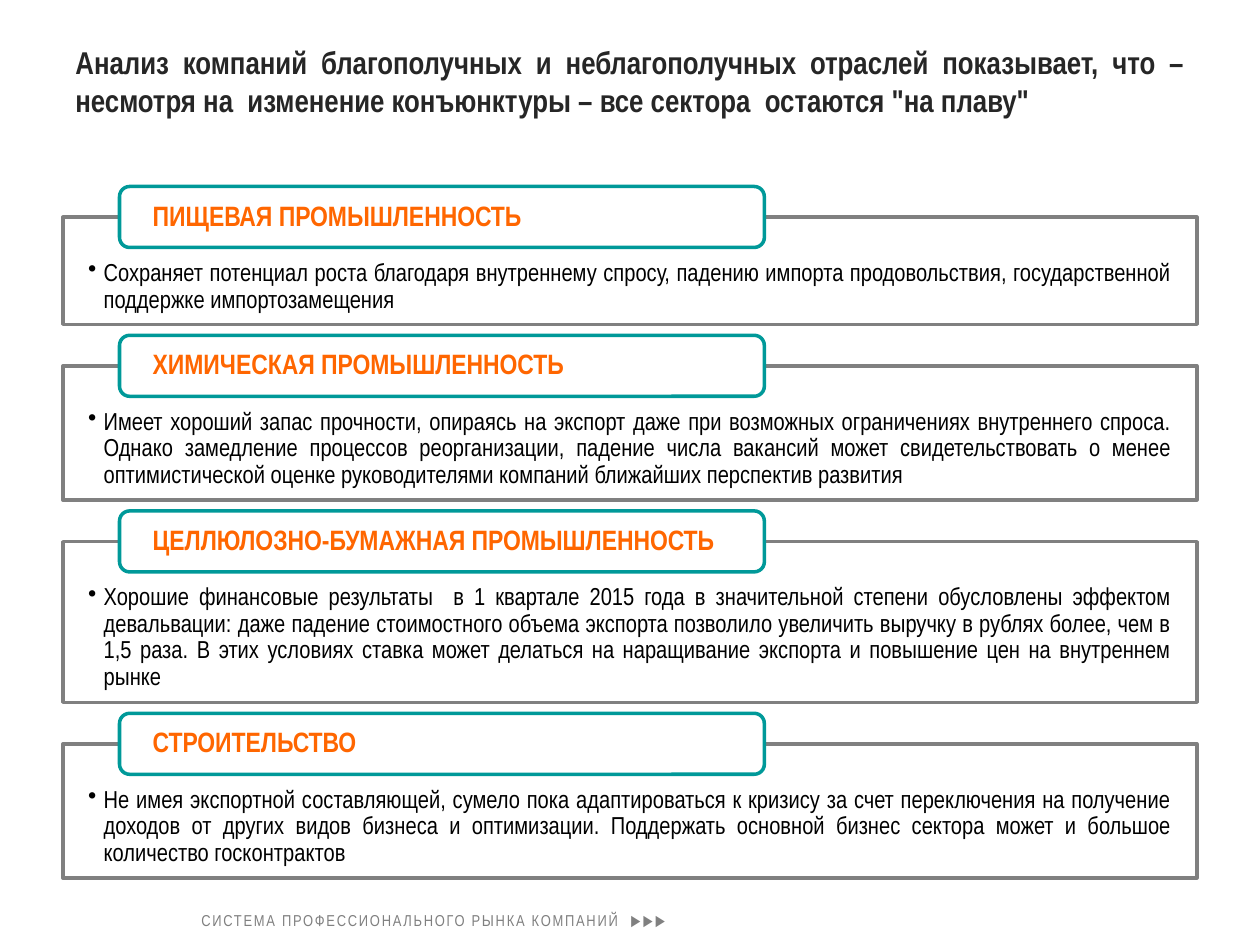
from pptx import Presentation
from pptx.dml.color import RGBColor
from pptx.enum.shapes import MSO_SHAPE
from pptx.enum.text import MSO_ANCHOR, PP_ALIGN
from pptx.oxml.xmlchemy import OxmlElement
from pptx.util import Cm, Pt

COLOURS = {
    "title": "262626",
    "text": "000000",
    "heading": "FF6600",
    "tab": "009999",
    "grey": "808080",
    "white": "FFFFFF",
}

SECTORS = [
    ("ПИЩЕВАЯ ПРОМЫШЛЕННОСТЬ", 2,
     "Сохраняет потенциал роста благодаря внутреннему спросу, падению импорта "
     "продовольствия, государственной поддержке импортозамещения"),
    ("ХИМИЧЕСКАЯ ПРОМЫШЛЕННОСТЬ", 3,
     "Имеет хороший запас прочности, опираясь на экспорт даже при возможных "
     "ограничениях внутреннего спроса. Однако замедление процессов реорганизации, "
     "падение числа вакансий может свидетельствовать о менее оптимистической оценке "
     "руководителями компаний ближайших перспектив развития"),
    ("ЦЕЛЛЮЛОЗНО-БУМАЖНАЯ ПРОМЫШЛЕННОСТЬ", 4,
     "Хорошие финансовые результаты  в 1 квартале 2015 года в значительной степени "
     "обусловлены эффектом девальвации: даже падение стоимостного объема экспорта "
     "позволило увеличить выручку в рублях более, чем в 1,5 раза. В этих условиях "
     "ставка может делаться на наращивание экспорта и повышение цен на внутреннем рынке"),
    ("СТРОИТЕЛЬСТВО", 3,
     "Не имея экспортной составляющей, сумело пока адаптироваться к кризису за счет "
     "переключения на получение доходов от других видов бизнеса и оптимизации. "
     "Поддержать основной бизнес сектора может и большое количество госконтрактов"),
]


class SectorPage:
    """Holds the style and the current slide and draws its elements."""

    font_name = "Arial Narrow"

    def __init__(self, deck):
        self.page = deck.slides.add_slide(deck.slide_layouts[5])

    def set_text(self, shape, text, size, colour, bold=False, align=PP_ALIGN.LEFT,
                 anchor=MSO_ANCHOR.TOP, insets=(0.25, 0.13, 0.25, 0.13), spacing=1.0):
        frame = shape.text_frame
        frame.word_wrap = True
        frame.vertical_anchor = anchor
        (frame.margin_left, frame.margin_top,
         frame.margin_right, frame.margin_bottom) = map(Cm, insets)
        frame.text = text
        paragraph = frame.paragraphs[0]
        paragraph.alignment = align
        paragraph.line_spacing = spacing
        paragraph.space_before = Pt(0)
        font = paragraph.font
        font.name, font.size, font.bold = self.font_name, Pt(size), bold
        font.color.rgb = RGBColor.from_string(COLOURS[colour])
        return paragraph

    def title(self, text):
        box = self.page.shapes.title
        box.left, box.top, box.width, box.height = Cm(1.27), Cm(0.74), Cm(22.86), Cm(3)
        self.set_text(box, text, 18, "title", bold=True, align=PP_ALIGN.JUSTIFY)

    def frame(self, kind, left, top, width, height, line):
        shape = self.page.shapes.add_shape(kind, Cm(left), Cm(top), Cm(width), Cm(height))
        shape.shadow.inherit = False
        shape.fill.solid()
        shape.fill.fore_color.rgb = RGBColor.from_string(COLOURS["white"])
        shape.line.color.rgb = RGBColor.from_string(COLOURS[line])
        shape.line.width = Pt(2)
        return shape

    def bullet(self, paragraph):
        properties = paragraph._p.get_or_add_pPr()
        properties.set("marL", str(Cm(0.31)))
        properties.set("indent", str(-Cm(0.31)))
        mark = OxmlElement("a:buChar")
        mark.set("char", "•")
        properties.insert_element_before(mark, "a:tabLst", "a:defRPr", "a:extLst")

    def sector(self, heading, text, top, height):
        body = self.frame(MSO_SHAPE.RECTANGLE, 1.27, top, 22.86, height, "grey")
        self.bullet(self.set_text(body, text, 14, "text", align=PP_ALIGN.JUSTIFY,
                                  insets=(0.51, 0.87, 0.51, 0.28), spacing=0.9))
        tab = self.frame(MSO_SHAPE.ROUNDED_RECTANGLE, 2.41, top - 0.62, 13, 1.23, "tab")
        self.set_text(tab, heading, 16, "heading", bold=True, anchor=MSO_ANCHOR.MIDDLE,
                      insets=(0.61, 0, 0.61, 0), spacing=0.9)

    def footer(self, text):
        box = self.page.shapes.add_textbox(Cm(3.81), Cm(18.24), Cm(13.7), Cm(0.61))
        paragraph = self.set_text(box, text, 9, "grey", anchor=MSO_ANCHOR.MIDDLE)
        paragraph.runs[0].font._element.set("spc", "100")


def main():
    deck = Presentation()
    deck.slide_width, deck.slide_height = Cm(25.4), Cm(19.05)
    page = SectorPage(deck)
    page.title("Анализ компаний благополучных и неблагополучных отраслей показывает, что – "
               "несмотря на  изменение конъюнктуры – все сектора  остаются \"на плаву\"")
    top = 4.38
    for heading, lines, text in SECTORS:
        height = 1.08 + 0.54 * lines
        page.sector(heading, text, top, height)
        top += height + 0.84
    page.footer("СИСТЕМА ПРОФЕССИОНАЛЬНОГО РЫНКА КОМПАНИЙ  ▶▶▶")
    deck.save("out.pptx")


if __name__ == "__main__":
    main()
